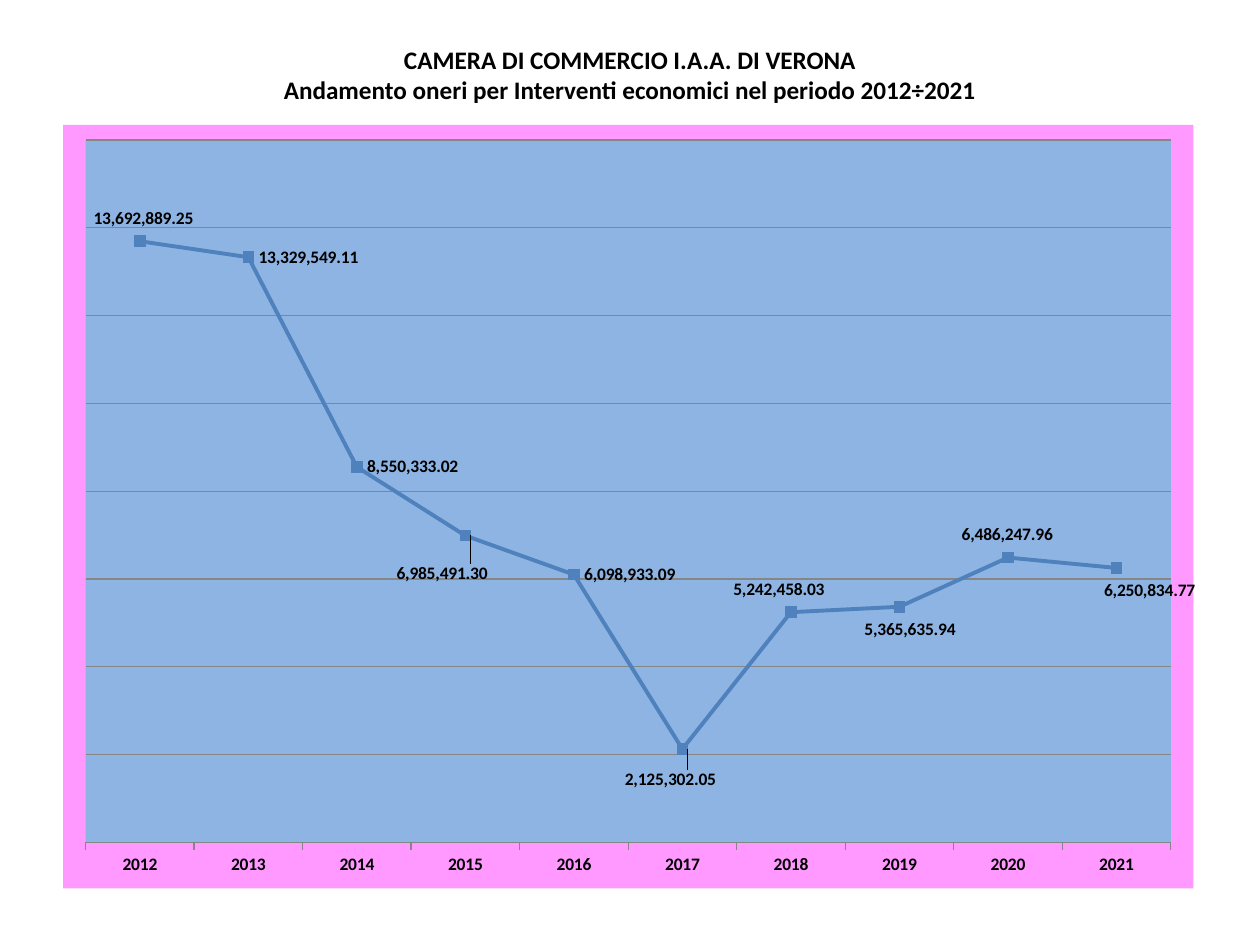
from lxml.etree import SubElement
from pptx import Presentation
from pptx.chart.data import CategoryChartData
from pptx.dml.color import RGBColor
from pptx.enum.chart import XL_CHART_TYPE as ChartType, XL_LABEL_POSITION as LabelPosition
from pptx.enum.chart import XL_MARKER_STYLE as MarkerStyle, XL_TICK_LABEL_POSITION as TickLabels
from pptx.enum.chart import XL_TICK_MARK as TickMark
from pptx.enum.text import MSO_ANCHOR, PP_ALIGN
from pptx.oxml import parse_xml
from pptx.oxml.ns import nsdecls, qn
from pptx.util import Inches, Pt

COLORS = {"text": "000000", "frame": "FF99FF", "plot": "8EB4E3", "cost": "4F81BD", "grid": "868686"}
TITLE = ("CAMERA DI COMMERCIO I.A.A. DI VERONA\n"
         "Andamento oneri per Interventi economici nel periodo 2012÷2021")
COSTS = {
    "2012": 13692889.25, "2013": 13329549.11, "2014": 8550333.02, "2015": 6985491.30,
    "2016": 6098933.09, "2017": 2125302.05, "2018": 5242458.03, "2019": 5365635.94,
    "2020": 6486247.96, "2021": 6250834.77,
}
LABEL_OFFSETS = {
    "2012": (-0.05, -0.03), "2015": (-0.07, 0.05), "2017": (-0.06, 0.04), "2018": (-0.06, -0.03),
    "2019": (-0.04, 0.03), "2020": (-0.05, -0.03), "2021": (-0.02, 0.03),
}
TITLE_FONT = {"name": "Calibri", "size": Pt(14.4), "bold": True}
CHART_FONT = {"name": "Calibri", "size": Pt(10), "bold": True}


def rgb(part):
    """Return the colour of a named part."""
    return RGBColor.from_string(COLORS[part])


def set_font(font, values):
    """Apply format values and the text colour to a font."""
    for attribute, value in values.items():
        setattr(font, attribute, value)
    font.color.rgb = rgb("text")


def set_line(line, part, width):
    """Give a line its colour and width in points."""
    line.color.rgb = rgb(part)
    line.width = Pt(width)


def manual_layout(**settings):
    """Build a chart layout element from its settings."""
    layout = parse_xml(f"<c:layout {nsdecls('c')}><c:manualLayout/></c:layout>")
    for tag, value in settings.items():
        SubElement(layout[0], qn(f"c:{tag}")).set("val", str(value))
    return layout


def fill_plot_area(chart):
    """Place and colour the plot area and the chart frame."""
    plot_area = chart._chartSpace.chart.plotArea
    for old_layout in plot_area.findall(qn("c:layout")):
        plot_area.remove(old_layout)
    plot_area.insert(0, manual_layout(layoutTarget="inner", xMode="edge", yMode="edge",
                                      x=0.02, y=0.02, w=0.96, h=0.92))
    for owner, part in ((plot_area, "plot"), (chart._chartSpace, "frame")):
        fill = parse_xml(
            f'<c:spPr {nsdecls("c", "a")}><a:solidFill><a:srgbClr val="{COLORS[part]}"/>'
            "</a:solidFill><a:ln><a:noFill/></a:ln></c:spPr>")
        if part == "plot":
            owner.append(fill)
        else:
            owner.chart.addnext(fill)


def format_axes(chart):
    """Show the years and the gridlines, and hide the value axis."""
    years, costs = chart.category_axis, chart.value_axis
    years.major_tick_mark = TickMark.OUTSIDE
    years.tick_label_position = TickLabels.LOW
    set_font(years.tick_labels.font, CHART_FONT)
    set_line(years.format.line, "grid", 0.75)
    limits = {"visible": False, "minimum_scale": 0, "maximum_scale": 16000000,
              "major_unit": 2000000, "has_major_gridlines": True}
    for attribute, value in limits.items():
        setattr(costs, attribute, value)
    set_line(costs.major_gridlines.format.line, "grid", 0.75)


def format_costs(series):
    """Style the cost line, its markers and its value labels."""
    series.smooth = False
    set_line(series.format.line, "cost", 2.25)
    series.marker.style = MarkerStyle.SQUARE
    series.marker.size = 6
    series.marker.format.fill.solid()
    series.marker.format.fill.fore_color.rgb = rgb("cost")
    set_line(series.marker.format.line, "cost", 0.75)
    labels = series.data_labels
    label_values = {"show_value": True, "number_format": "#,##0.00",
                    "number_format_is_linked": False, "position": LabelPosition.RIGHT}
    for attribute, value in label_values.items():
        setattr(labels, attribute, value)
    set_font(labels.font, CHART_FONT)
    for index, year in enumerate(COSTS):
        if year in LABEL_OFFSETS:
            label = series.points[index].data_label
            set_font(label.font, CHART_FONT)
            label.position = LabelPosition.RIGHT
            x, y = LABEL_OFFSETS[year]
            label._dLbl.find(qn("c:idx")).addnext(manual_layout(x=x, y=y))


def add_title(slide, left, top, width, height):
    """Add the centred two-line heading."""
    frame = slide.shapes.add_textbox(left, top, width, height).text_frame
    frame.word_wrap = True
    frame.vertical_anchor = MSO_ANCHOR.TOP
    heading = frame.paragraphs[0]
    heading.text = TITLE
    heading.alignment = PP_ALIGN.CENTER
    for run in heading.runs:
        set_font(run.font, TITLE_FONT)


def add_cost_chart(slide, left, top, width, height):
    """Add the line chart of yearly costs."""
    data = CategoryChartData(number_format="#,##0.00")
    data.categories = list(COSTS)
    data.add_series("Series 1", list(COSTS.values()))
    chart = slide.shapes.add_chart(ChartType.LINE_MARKERS, left, top, width, height, data).chart
    chart.has_title = False
    chart.has_legend = False
    set_font(chart.font, CHART_FONT)
    chart.plots[0].vary_by_categories = False
    format_axes(chart)
    format_costs(chart.plots[0].series[0])
    fill_plot_area(chart)


def main():
    """Build and save the slide."""
    deck = Presentation()
    deck.slide_width, deck.slide_height = Inches(10), Inches(7.5)
    slide = deck.slides.add_slide(deck.slide_layouts[6])
    add_title(slide, Inches(0.5), Inches(0.3), Inches(9), Inches(1.25))
    add_cost_chart(slide, Inches(0.5), Inches(0.99), Inches(9), Inches(6.06))
    deck.save("out.pptx")


if __name__ == "__main__":
    main()
